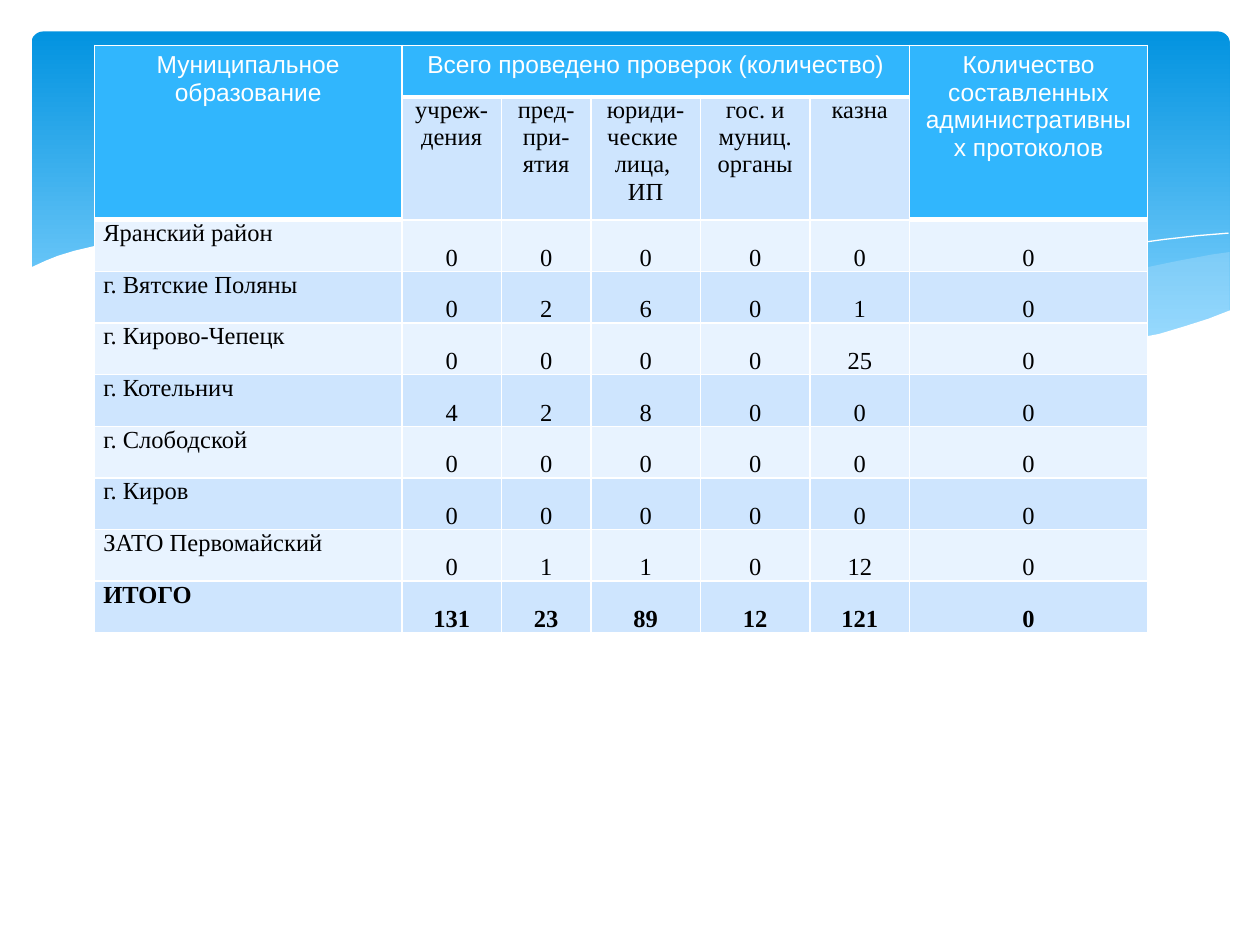
from typing import NamedTuple, Optional

from lxml.etree import SubElement
from pptx import Presentation
from pptx.dml.color import RGBColor
from pptx.enum.shapes import MSO_SHAPE
from pptx.enum.text import MSO_ANCHOR, PP_ALIGN
from pptx.oxml.ns import qn
from pptx.util import Inches, Pt

COLORS = {
    "sky_top": "0293E0", "sky_bottom": "83D3FE", "wave": "C6E7FC",
    "header": "31B6FD", "band_dark": "CEE5FE", "band_light": "E8F3FF",
    "white": "FFFFFF", "black": "000000",
}


class Wave(NamedTuple):
    points: list[tuple[float, float]]
    fill: Optional[str] = None
    alpha: int = 100


WAVES = [
    Wave([(9.76, 2), (9.62, 2.02), (9.35, 2.07), (9.06, 2.13), (8.61, 2.23),
          (8.05, 2.37), (7.53, 2.48), (7.06, 2.57), (6.61, 2.65), (6.91, 2.69),
          (7.32, 2.74), (7.69, 2.77), (8.03, 2.78), (8.44, 2.77), (8.72, 2.74),
          (8.97, 2.7), (9.21, 2.65), (9.42, 2.59), (9.63, 2.52), (9.76, 2.47)],
         "wave", 29),
    Wave([(8.93, 2.73), (8.66, 2.69), (8.07, 2.6), (7.41, 2.47), (6.68, 2.31),
          (6.29, 2.22), (5.84, 2.11), (5.41, 2.03), (5.02, 1.96), (4.65, 1.91),
          (4.2, 1.87), (3.8, 1.85), (3.44, 1.86), (3.13, 1.88), (2.86, 1.91),
          (3.23, 1.96), (3.62, 2.03), (4.04, 2.11), (4.49, 2.22), (5.3, 2.4),
          (5.84, 2.52), (6.34, 2.61), (6.8, 2.68), (7.22, 2.74), (7.61, 2.77),
          (7.96, 2.78), (8.28, 2.78), (8.57, 2.77), (8.76, 2.75)],
         "wave", 40),
    Wave([(3.09, 1.95), (3.28, 1.92), (3.53, 1.89), (3.87, 1.87), (4.33, 1.87),
          (4.69, 1.89), (5.1, 1.92), (5.56, 1.97), (6.08, 2.04), (6.65, 2.13),
          (7.27, 2.26), (7.95, 2.41), (8.69, 2.61), (9.07, 2.72)]),
    Wave([(6.13, 2.57), (6.53, 2.46), (6.95, 2.35), (7.48, 2.23), (8.06, 2.1),
          (8.66, 1.99), (8.95, 1.94), (9.24, 1.9), (9.51, 1.87), (9.75, 1.85)]),
    Wave([(9.77, 2.46), (9.59, 2.53), (9.4, 2.59), (9.2, 2.65), (8.99, 2.69),
          (8.75, 2.73), (8.5, 2.75), (8.09, 2.77), (7.61, 2.75), (7.26, 2.72),
          (6.88, 2.68), (6.48, 2.62), (6.03, 2.54), (5.55, 2.45), (5.03, 2.33),
          (4.47, 2.2), (3.91, 2.07), (3.4, 1.97), (2.92, 1.9), (2.5, 1.86),
          (2.11, 1.84), (1.77, 1.84), (1.46, 1.85), (1.19, 1.87), (0.95, 1.91),
          (0.76, 1.95), (0.59, 1.99), (0.46, 2.03), (0.36, 2.07), (0.23, 2.13),
          (0.23, 3.29), (9.77, 3.29)], "white"),
]

COL_WIDTHS = [2.44, 0.79, 0.71, 0.87, 0.87, 0.79, 1.89]
ROW_HEIGHT = 0.41
# row, column, last row, last column, text
HEADERS = [
    (0, 0, 1, 0, "Муниципальное образование"),
    (0, 1, 0, 5, "Всего проведено проверок (количество)"),
    (0, 6, 1, 6, "Количество составленных административных протоколов"),
]
SUBHEADERS = ["учреж-дения", "пред-\nпри-\nятия", "юриди-ческие \nлица, \nИП",
              "гос. и муниц. органы", "казна"]
ROWS = [
    ("Яранский район", 0, 0, 0, 0, 0, 0),
    ("г. Вятские Поляны", 0, 2, 6, 0, 1, 0),
    ("г. Кирово-Чепецк", 0, 0, 0, 0, 25, 0),
    ("г. Котельнич", 4, 2, 8, 0, 0, 0),
    ("г. Слободской", 0, 0, 0, 0, 0, 0),
    ("г. Киров", 0, 0, 0, 0, 0, 0),
    ("ЗАТО Первомайский", 0, 1, 1, 0, 12, 0),
    ("ИТОГО", 131, 23, 89, 12, 121, 0),
]


def rgb(name: str) -> RGBColor:
    return RGBColor.from_string(COLORS[name])


def draw_sky(s) -> None:
    sky = s.shapes.add_shape(MSO_SHAPE.ROUNDED_RECTANGLE, Inches(0.25),
                             Inches(0.25), Inches(9.51), Inches(2.7))
    sky.adjustments[0] = 0.034
    sky.shadow.inherit = False
    sky.line.fill.background()
    sky.fill.gradient()
    sky.fill.gradient_angle = 270
    stops = zip(sky.fill.gradient_stops, ("sky_top", "sky_bottom"), (0, 0.9))
    for stop, color, position in stops:
        stop.color.rgb = rgb(color)
        stop.position = position


def draw_wave(s, wave: Wave) -> None:
    """Draw a filled area, or a white hairline if the wave has no fill."""
    points = [(Inches(x), Inches(y)) for x, y in wave.points]
    builder = s.shapes.build_freeform(*points[0])
    builder.add_line_segments(points[1:], close=wave.fill is not None)
    shape = builder.convert_to_shape()
    shape.shadow.inherit = False
    if wave.fill is None:
        shape.fill.background()
        shape.line.color.rgb = rgb("white")
        shape.line.width = Pt(0)
        return
    shape.line.fill.background()
    shape.fill.solid()
    shape.fill.fore_color.rgb = rgb(wave.fill)
    if wave.alpha < 100:
        color = shape.fill._xPr.find(qn("a:solidFill"))[0]
        SubElement(color, qn("a:alpha"), val=str(wave.alpha * 1000))


def style_cell(cell, fill: str, bottom: int = 1) -> None:
    """Fill the cell and give it white borders, with widths in points."""
    tcPr = cell._tc.get_or_add_tcPr()
    for side, width in (("L", 1), ("R", 1), ("T", 1), ("B", bottom)):
        ln = SubElement(tcPr, qn(f"a:ln{side}"), w=str(Pt(width)))
        solid = SubElement(ln, qn("a:solidFill"))
        SubElement(solid, qn("a:srgbClr"), val=COLORS["white"])
    cell.fill.solid()
    cell.fill.fore_color.rgb = rgb(fill)


def write(cell, text: str, *, font: str = "Times New Roman",
          color: str = "black", bold: bool = False, align=PP_ALIGN.CENTER,
          anchor=MSO_ANCHOR.TOP, tight: bool = True) -> None:
    cell.vertical_anchor = anchor
    if tight:
        cell.margin_left = cell.margin_right = Inches(0.07)
        cell.margin_top = cell.margin_bottom = 0
    tf = cell.text_frame
    tf.text = text
    for p in tf.paragraphs:
        p.alignment = align
        for r in p.runs:
            r.font.name = font
            r.font.size = Pt(14)
            r.font.bold = bold
            r.font.color.rgb = rgb(color)


def draw_table(s) -> None:
    n_rows = len(ROWS) + 2
    table = s.shapes.add_table(
        n_rows, len(COL_WIDTHS), Inches(0.75), Inches(0.36),
        Inches(sum(COL_WIDTHS)), Inches(ROW_HEIGHT * n_rows)).table
    table.first_row = table.horz_banding = False
    for column, width in zip(table.columns, COL_WIDTHS):
        column.width = Inches(width)
    for row in table.rows:
        row.height = Inches(ROW_HEIGHT)

    for top, left, bottom, right, text in HEADERS:
        for i in range(top, bottom + 1):
            for j in range(left, right + 1):
                style_cell(table.cell(i, j), "header", bottom=3)
        cell = table.cell(top, left)
        cell.merge(table.cell(bottom, right))
        write(cell, text, font="Arial", color="white", tight=False)

    for j, text in enumerate(SUBHEADERS, 1):
        style_cell(table.cell(1, j), "band_dark")
        write(table.cell(1, j), text)

    for i, values in enumerate(ROWS, 2):
        for j, value in enumerate(values):
            cell = table.cell(i, j)
            style_cell(cell, "band_dark" if i % 2 else "band_light")
            write(cell, str(value), bold=i == n_rows - 1,
                  align=PP_ALIGN.CENTER if j else PP_ALIGN.LEFT,
                  anchor=MSO_ANCHOR.BOTTOM if j else MSO_ANCHOR.TOP)


def main() -> None:
    prs = Presentation()
    prs.slide_width, prs.slide_height = Inches(10), Inches(7.5)
    s = prs.slides.add_slide(prs.slide_layouts[6])
    draw_sky(s)
    for wave in WAVES:
        draw_wave(s, wave)
    draw_table(s)
    prs.save("out.pptx")


if __name__ == "__main__":
    main()
